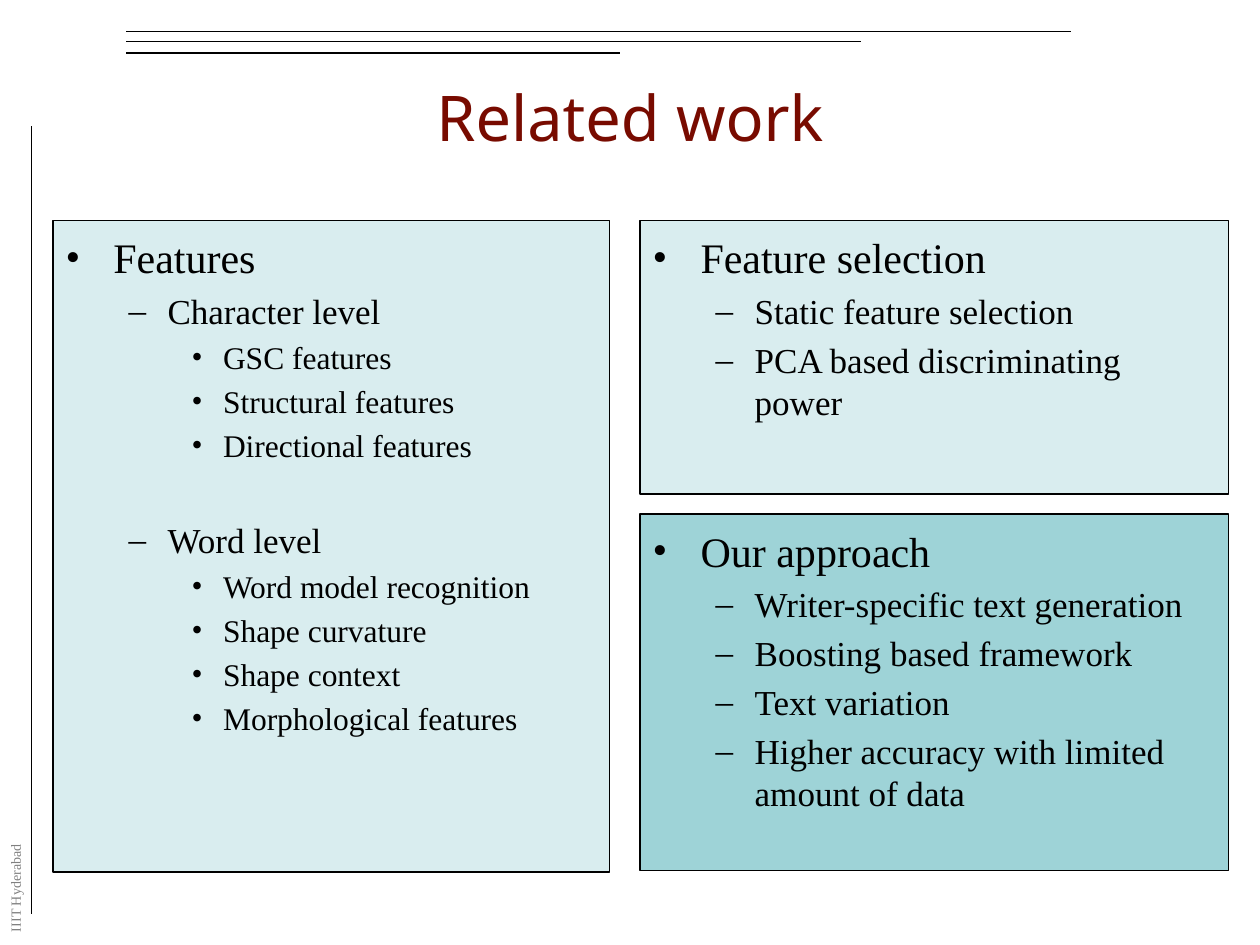
"""Build the "Related work" slide with three outlined topic panels."""
from lxml import etree
from pptx import Presentation
from pptx.dml.color import RGBColor
from pptx.enum.shapes import MSO_CONNECTOR
from pptx.enum.text import MSO_ANCHOR, MSO_AUTO_SIZE, PP_ALIGN
from pptx.oxml.ns import qn
from pptx.util import Inches, Pt

STRAIGHT = MSO_CONNECTOR.STRAIGHT
TOP, MIDDLE = MSO_ANCHOR.TOP, MSO_ANCHOR.MIDDLE
CENTER = PP_ALIGN.CENTER
NO_FIT = MSO_AUTO_SIZE.NONE

TITLE = "Related work"
SIDE_LABEL = "IIIT Hyderabad"
FEATURES = [
    (0, "Features"),
    (1, "Character level"),
    (2, "GSC features"),
    (2, "Structural features"),
    (2, "Directional features"),
    (1, "Word level"),
    (2, "Word model recognition"),
    (2, "Shape curvature"),
    (2, "Shape context"),
    (2, "Morphological features"),
]
SELECTION = [
    (0, "Feature selection"),
    (1, "Static feature selection"),
    (1, "PCA based discriminating power"),
]
APPROACH = [
    (0, "Our approach"),
    (1, "Writer-specific text generation"),
    (1, "Boosting based framework"),
    (1, "Text variation"),
    (1, "Higher accuracy with limited amount of data"),
]
PANELS = [
    (2, (0.42, 1.75, 4.42, 5.17), "pale", FEATURES),
    (4, (5.08, 1.75, 4.67, 2.17), "pale", SELECTION),
    (1, (5.08, 4.08, 4.67, 2.83), "teal", APPROACH),
]
RULES = [
    (1, 0.25, 8.5, 0.25),
    (1, 0.33, 6.83, 0.33),
    (1, 0.42, 4.92, 0.42),
    (0.25, 1, 0.25, 7.25),
]
LEVELS = [("•", 0.38, 0.38), ("–", 0.81, 0.31), ("•", 1.25, 0.25)]
THEME = {
    "title_font": "Noto Sans",
    "body_font": "Times New Roman",
    "title_size": 36,
    "level_sizes": (24, 20, 18),
    "label_size": 8,
    "line_width": 0.75,
    "space_ratio": 0.2,
    "group_gap": 27.5,
    "black": RGBColor(0x00, 0x00, 0x00),
    "gray": RGBColor(0x80, 0x80, 0x80),
    "maroon": RGBColor(0x78, 0x0B, 0x00),
    "pale": RGBColor(0xD9, 0xED, 0xEF),
    "teal": RGBColor(0x9E, 0xD3, 0xD7),
}


def place(sp, box):
    sp.left, sp.top, sp.width, sp.height = map(Inches, box)


def style_text(p, font, size, color):
    for r in p.runs:
        r.font.name = font
        r.font.size = Pt(size)
        r.font.bold = False
        r.font.color.rgb = THEME[color]


def style_line(line):
    line.color.rgb = THEME["black"]
    line.width = Pt(THEME["line_width"])


def add_rule(s, ends):
    line = s.shapes.add_connector(STRAIGHT, *map(Inches, ends))
    style_line(line.line)
    etree.SubElement(line._element.spPr, qn("a:effectLst"))


def add_side_label(s):
    sp = s.shapes.add_textbox(*map(Inches, (-0.34, 6.92, 0.92, 0.23)))
    sp.rotation = 270
    sp.text_frame.text = SIDE_LABEL
    style_text(sp.text_frame.paragraphs[0], THEME["body_font"],
               THEME["label_size"], "gray")


def fill_title(sp):
    place(sp, (0.5, 0.3, 9, 1.25))
    tf = sp.text_frame
    tf.text = TITLE
    tf.auto_size = NO_FIT
    tf.vertical_anchor = MIDDLE
    p = tf.paragraphs[0]
    p.alignment = CENTER
    style_text(p, THEME["title_font"], THEME["title_size"], "maroon")


def format_item(p, level, space):
    bullet, margin, hang = LEVELS[level]
    p.level = level
    pPr = p._p.get_or_add_pPr()
    pPr.set("marL", str(Inches(margin)))
    pPr.set("indent", str(-Inches(hang)))
    etree.SubElement(pPr, qn("a:buFont")).set("typeface", THEME["body_font"])
    etree.SubElement(pPr, qn("a:buChar")).set("char", bullet)
    p.space_before = Pt(space)
    style_text(p, THEME["body_font"], THEME["level_sizes"][level], "black")


def fill_panel(sp, box, color, items):
    place(sp, box)
    sp.fill.solid()
    sp.fill.fore_color.rgb = THEME[color]
    style_line(sp.line)
    tf = sp.text_frame
    tf.text = "\n".join(text for _, text in items)
    tf.word_wrap = True
    tf.auto_size = NO_FIT
    tf.vertical_anchor = TOP
    tf.margin_top = Inches(0.09)
    previous = None
    for p, (level, _) in zip(tf.paragraphs, items):
        space = 0
        if previous is not None:
            space = THEME["level_sizes"][level] * THEME["space_ratio"]
            if level < previous:
                space += THEME["group_gap"]
        format_item(p, level, space)
        previous = level


def main():
    prs = Presentation()
    prs.slide_width, prs.slide_height = Inches(10), Inches(7.5)
    s = prs.slides.add_slide(prs.slide_layouts.get_by_name("Comparison"))
    for ends in RULES:
        add_rule(s, ends)
    add_side_label(s)
    fill_title(s.shapes.title)
    holders = {sp.placeholder_format.idx: sp for sp in s.placeholders}
    for idx, box, color, items in PANELS:
        fill_panel(holders[idx], box, color, items)
    unused = holders[3]._element
    unused.getparent().remove(unused)
    prs.save("out.pptx")


if __name__ == "__main__":
    main()
